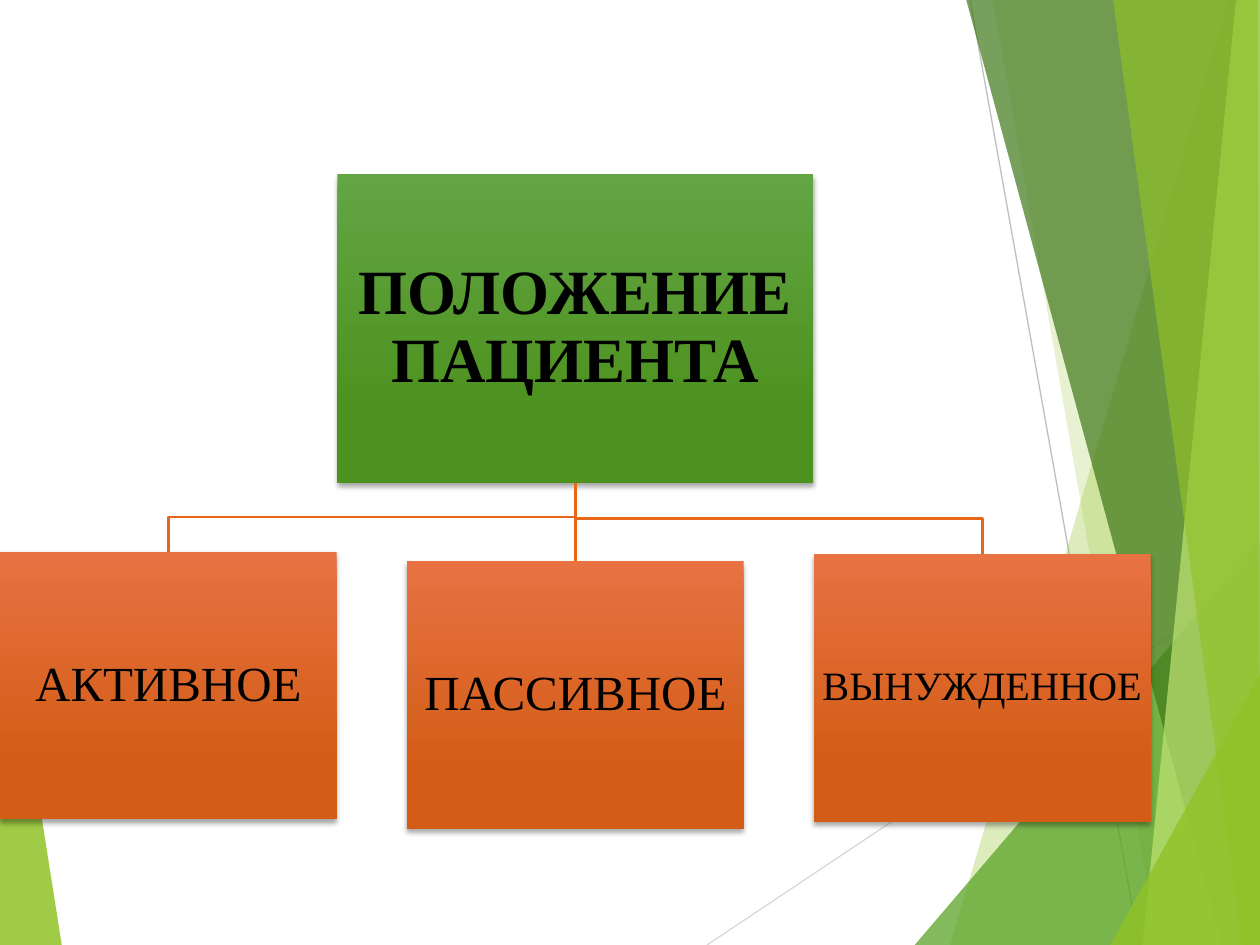
from lxml import etree
from pptx import Presentation
from pptx.dml.color import RGBColor
from pptx.enum import shapes as kinds, text as enum
from pptx.oxml import parse_xml
from pptx.oxml.ns import qn
from pptx.util import Pt
from collections import namedtuple

Theme = namedtuple("Theme", "font ink wire green orange lime leaf dark pale gray silver head body small")
theme = Theme(
    font="Times New Roman", ink="000000", wire="E76618",
    green=("63A545", "4D921E"), orange=("E87242", "D35D16"),
    lime="90C226", leaf="54A021", dark="3F7819", pale="C0E474",
    gray="BFBFBF", silver="D9D9D9", head=36, body=28, small=23,
)
NS = 'xmlns:a="http://schemas.openxmlformats.org/drawingml/2006/main"'
SHADOW = (
    f'<a:effectLst {NS}><a:outerShdw blurRad="{Pt(3)}" dist="{Pt(2)}" dir="5400000">'
    '<a:srgbClr val="000000"><a:alpha val="35000"/></a:srgbClr>'
    '</a:outerShdw></a:effectLst>'
)


def outline(points, closed):
    """Add a freeform through points given in points of length."""
    spots = [(Pt(x), Pt(y)) for x, y in points]
    pen = slide.shapes.build_freeform(*spots[0])
    pen.add_line_segments(spots[1:], close=closed)
    shape = pen.convert_to_shape()
    shape.shadow.inherit = False
    return shape


def link(start, end, color, width):
    """Add a straight connector without a shadow."""
    wire = slide.shapes.add_connector(
        kinds.MSO_CONNECTOR.STRAIGHT, *[Pt(v) for v in start + end])
    wire.line.color.rgb = RGBColor.from_string(color)
    wire.line.width = Pt(width)
    etree.SubElement(wire._element.spPr, qn("a:effectLst"))
    return wire


wide, high = 720, 540
deck = Presentation()
deck.slide_width, deck.slide_height = Pt(wide), Pt(high)
slide = deck.slides.add_slide(deck.slide_layouts[6])

# Backdrop: thin lines lie between the left facet and the right ones
link((404, high), (wide, 329), theme.silver, 0.75)
link((554.4, 0), (651, high), theme.gray, 0.75)
facets = [
    (theme.lime, 85, [(0, 316), (35.3, high), (0, high)]),
    (theme.lime, 30, [(702, 0), (543, high), (wide, high), (wide, 0)]),
    (theme.lime, 20, [(567.4, 0), (661.7, high), (wide, high), (wide, 0)]),
    (theme.leaf, 72, [(522.7, high), (wide, 309), (wide, high)]),
    (theme.dark, 70, [(552.2, 0), (698.4, high), (wide, high), (wide, 0)]),
    (theme.pale, 70, [(706.3, 0), (653, high), (wide, high), (wide, 0)]),
    (theme.lime, 65, [(636, 0), (709.9, high), (wide, high), (718.6, 0)]),
    (theme.lime, 80, [(634.5, high), (wide, 385.2), (wide, high)]),
]
for color, alpha, points in facets:
    facet = outline(points, True)
    facet.line.fill.background()
    facet.fill.solid()
    facet.fill.fore_color.rgb = RGBColor.from_string(color)
    tint = facet._element.spPr.find(qn("a:solidFill"))[0]
    etree.SubElement(tint, qn("a:alpha"), val=str(alpha * 1000))

# Boxes: one parent above three children at an equal pitch
pitch, child, tall = 232.6, 192.4, 153
top, base, mid = 99.4, 275.8, 328.8
rows = [
    ("ПОЛОЖЕНИЕ ПАЦИЕНТА", 192.8, top, 272, base - top, theme.green, theme.head, 2.2),
    ("АКТИВНОЕ", 0, 315.2, child, tall, theme.orange, theme.body, 1.4),
    ("ПАССИВНОЕ", pitch, 320.6, child, tall, theme.orange, theme.body, 1.4),
    ("ВЫНУЖДЕННОЕ", 2 * pitch, 316.6, child, tall, theme.orange, theme.small, 1.4),
]
boxes = []
for words, x, y, w, h, shades, size, inset in rows:
    box = slide.shapes.add_shape(
        kinds.MSO_SHAPE.RECTANGLE, Pt(x), Pt(y), Pt(w), Pt(h))
    box.line.fill.background()
    box.fill.gradient()
    box.fill.gradient_angle = 270
    for stop, shade, place in zip(box.fill.gradient_stops, shades, (0, 0.78)):
        stop.color.rgb = RGBColor.from_string(shade)
        stop.position = place
    box._element.spPr.append(parse_xml(SHADOW))
    frame = box.text_frame
    frame.word_wrap = True
    frame.vertical_anchor = enum.MSO_ANCHOR.MIDDLE
    frame.margin_left = frame.margin_right = Pt(inset)
    frame.margin_top = frame.margin_bottom = Pt(inset)
    para = frame.paragraphs[0]
    para.text = words
    para.alignment = enum.PP_ALIGN.CENTER
    para.line_spacing = 0.9
    para.font.name = theme.font
    para.font.size = Pt(size)
    para.font.bold = size == theme.head
    para.font.color.rgb = RGBColor.from_string(theme.ink)
    boxes.append(box)

# Branches: bent ones turn halfway down the gap, the middle one is straight
for row in (rows[1], rows[3]):
    x, y = row[1] + child / 2, row[2]
    bend = (base + y) / 2
    branch = outline([(mid, base), (mid, bend), (x, bend), (x, y)], False)
    branch.fill.background()
    branch.line.color.rgb = RGBColor.from_string(theme.wire)
    branch.line.width = Pt(1.5)
stem = link((mid, base), (mid, rows[2][2]), theme.wire, 1.5)
stem.begin_connect(boxes[0], 2)
stem.end_connect(boxes[2], 0)

deck.save("out.pptx")
